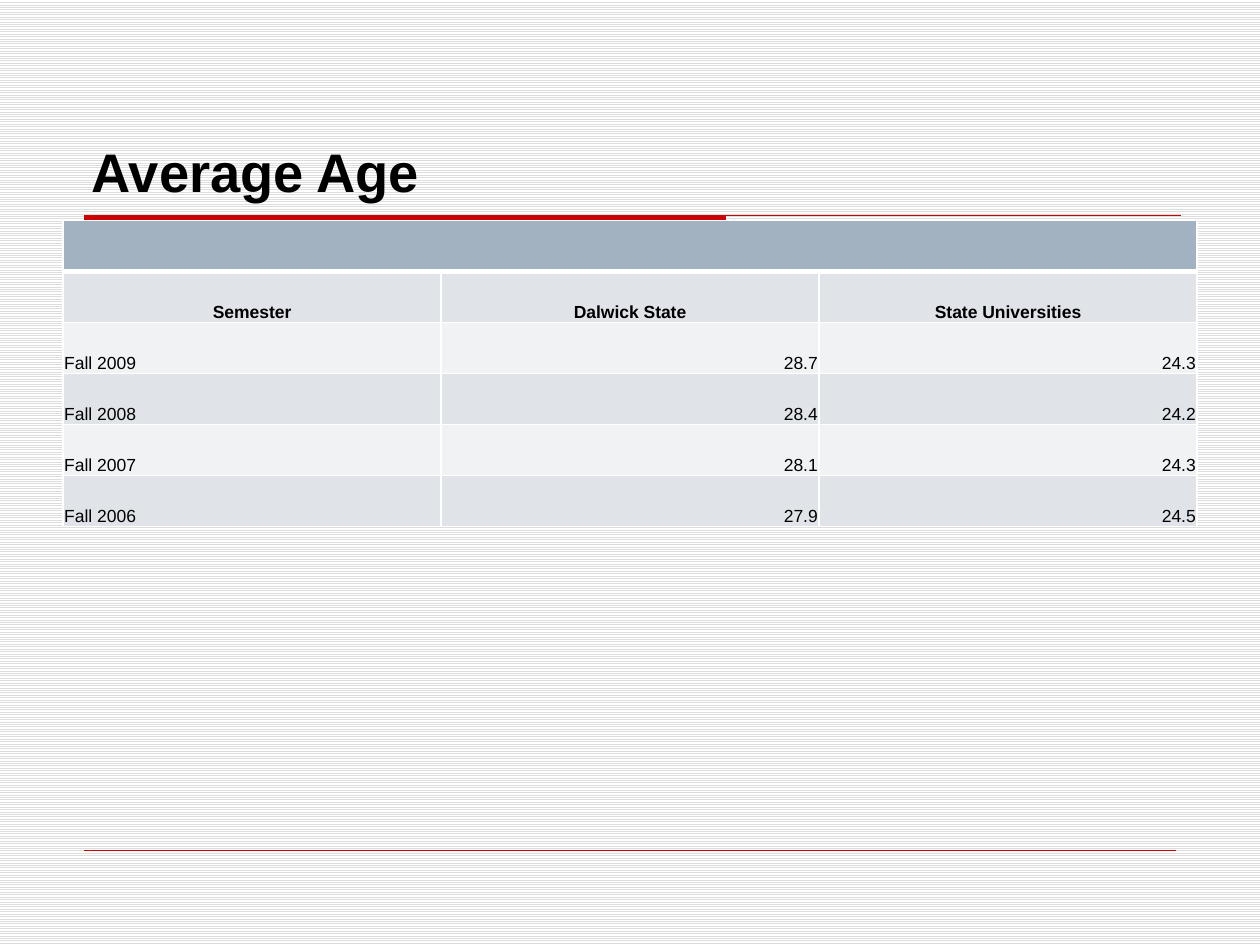
from lxml import etree
from pptx import Presentation
from pptx import util as u
from pptx.dml.color import RGBColor
from pptx.enum import dml, shapes, text
from pptx.oxml import ns

BLACK = RGBColor(0x00, 0x00, 0x00)
WHITE = RGBColor(0xFF, 0xFF, 0xFF)
STRIPE = RGBColor(0xDD, 0xDD, 0xDD)
RED = RGBColor(0xCC, 0x00, 0x00)
HEADER = RGBColor(0xA3, 0xB2, 0xC1)
BANDS = (RGBColor(0xE0, 0xE4, 0xE9), RGBColor(0xF0, 0xF2, 0xF4))

ROWS = [
    ("Semester", "Dalwick State", "State Universities"),
    ("Fall 2009", "28.7", "24.3"),
    ("Fall 2008", "28.4", "24.2"),
    ("Fall 2007", "28.1", "24.3"),
    ("Fall 2006", "27.9", "24.5"),
]


def write(tf, content, size, bold=False, align=text.PP_ALIGN.LEFT, font="Arial", color=BLACK):
    p = tf.paragraphs[0]
    p.alignment = align
    r = p.add_run()
    r.text = content
    r.font.name, r.font.size, r.font.bold = font, u.Pt(size), bold
    r.font.color.rgb = color


def border(cell, bottom=1):
    tc_pr = cell._tc.get_or_add_tcPr()
    for side, width in (("L", 1), ("R", 1), ("T", 1), ("B", bottom)):
        ln = etree.SubElement(tc_pr, ns.qn(f"a:ln{side}"), w=str(u.Pt(width)))
        fill = etree.SubElement(ln, ns.qn("a:solidFill"))
        etree.SubElement(fill, ns.qn("a:srgbClr"), val=str(WHITE))


class Deck:
    def __init__(self):
        self.prs = Presentation()
        self.prs.slide_width, self.prs.slide_height = u.Inches(10), u.Inches(7.5)
        self.s = self.prs.slides.add_slide(self.prs.slide_layouts[6])

    def background(self):
        fill = self.s.background.fill
        fill.patterned()
        fill.pattern = dml.MSO_PATTERN.LIGHT_HORIZONTAL
        fill.fore_color.rgb, fill.back_color.rgb = STRIPE, WHITE

    def title_bar(self, left, top, bar_right, line_right, height):
        x, y, bar_x, line_x, bottom = map(
            u.Inches, (left, top, bar_right, line_right, top + height))
        fb = self.s.shapes.build_freeform(x, y)
        fb.add_line_segments([(bar_x, y), (bar_x, bottom), (x, bottom)], close=True)
        fb.move_to(x, y)
        fb.add_line_segments([(line_x, y)], close=False)
        sp = fb.convert_to_shape()
        sp.shadow.inherit = False
        sp.fill.solid()
        sp.fill.fore_color.rgb = sp.line.color.rgb = RED
        sp.line.width = u.Pt(0.75)

    def rule(self, left, right, y):
        sp = self.s.shapes.add_connector(
            shapes.MSO_CONNECTOR.STRAIGHT, u.Inches(left), u.Inches(y), u.Inches(right), u.Inches(y))
        sp.line.color.rgb, sp.line.width = RED, u.Pt(0.25)
        etree.SubElement(sp._element.spPr, ns.qn("a:effectLst"))

    def title(self, content, *box):
        tf = self.s.shapes.add_textbox(*map(u.Inches, box)).text_frame
        tf.word_wrap = True
        tf.auto_size = text.MSO_AUTO_SIZE.NONE
        tf.vertical_anchor = text.MSO_ANCHOR.BOTTOM
        write(tf, content, 31, bold=True)

    def table(self, rows, *box):
        table = self.s.shapes.add_table(
            len(rows) + 1, len(rows[0]), *map(u.Inches, box)).table
        header = table.cell(0, 0)
        header.merge(table.cell(0, len(rows[0]) - 1))
        for cell in table.rows[0].cells:
            border(cell, bottom=3)
            cell.fill.solid()
            cell.fill.fore_color.rgb = HEADER
        for i, row in enumerate(rows):
            for j, value in enumerate(row):
                cell = table.cell(i + 1, j)
                border(cell)
                cell.fill.solid()
                cell.fill.fore_color.rgb = BANDS[i % 2]
                cell.margin_left = cell.margin_right = cell.margin_top = u.Inches(0.01)
                cell.margin_bottom = 0
                cell.vertical_anchor = text.MSO_ANCHOR.BOTTOM
                align = (text.PP_ALIGN.CENTER if i == 0
                         else text.PP_ALIGN.RIGHT if j else text.PP_ALIGN.LEFT)
                write(cell.text_frame, value, 10, bold=i == 0, align=align)


def main():
    deck = Deck()
    deck.background()
    deck.title_bar(0.67, 1.71, 5.76, 9.37, 0.12)
    deck.rule(0.67, 9.33, 6.75)
    deck.title("Average Age", 0.63, 0.33, 8.75, 1.33)
    deck.table(ROWS, 0.5, 1.75, 9, 2.43)
    deck.prs.save("out.pptx")


if __name__ == "__main__":
    main()
